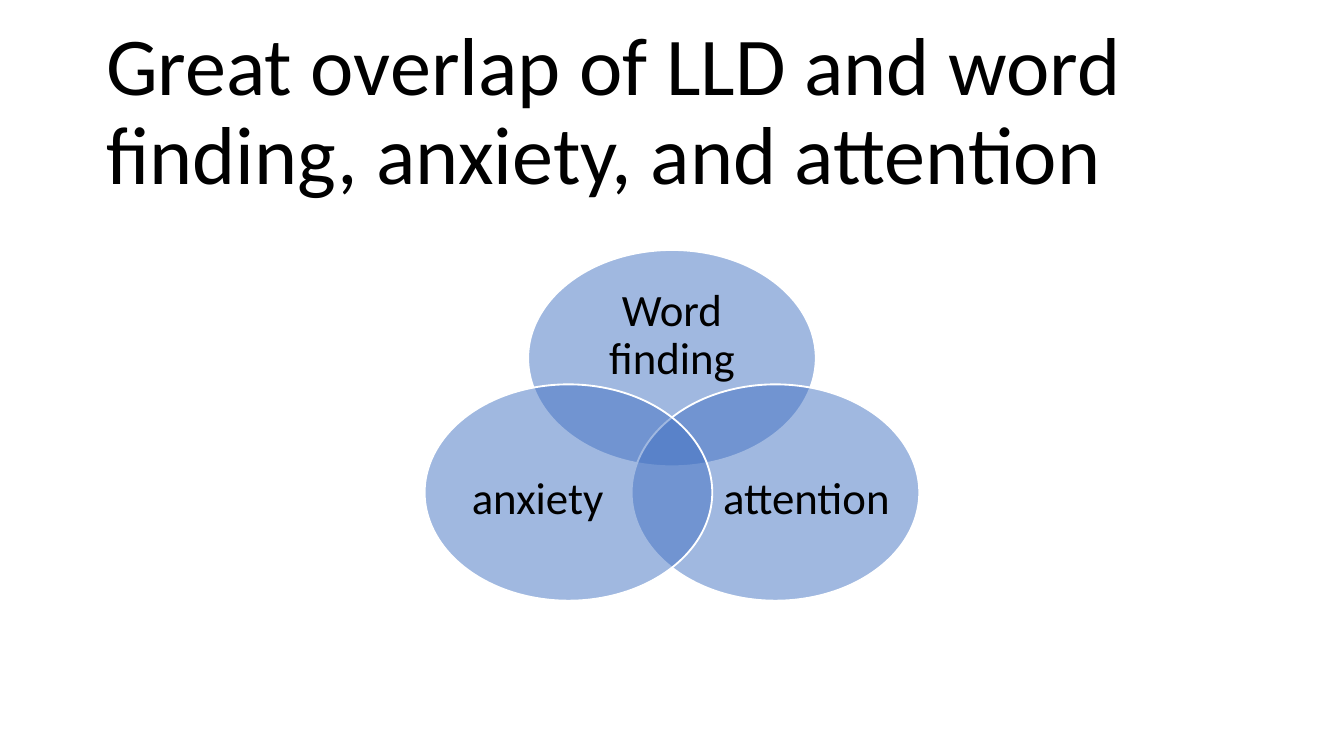
from dataclasses import dataclass

from lxml import etree
from pptx import Presentation
from pptx.dml.color import RGBColor
from pptx.enum.shapes import MSO_SHAPE
from pptx.enum.text import MSO_ANCHOR, MSO_AUTO_SIZE, PP_ALIGN
from pptx.oxml.ns import qn
from pptx.util import Inches, Pt

OVAL = MSO_SHAPE.OVAL
MIDDLE = MSO_ANCHOR.MIDDLE
NO_FIT = MSO_AUTO_SIZE.NONE
LEFT, CENTER = PP_ALIGN.LEFT, PP_ALIGN.CENTER


@dataclass(frozen=True)
class Theme:
    font: str = "Calibri"
    title_size: int = 44
    label_size: int = 24
    text: RGBColor = RGBColor(0, 0, 0)
    circle: RGBColor = RGBColor(0x43, 0x72, 0xC3)
    outline: RGBColor = RGBColor(0xFF, 0xFF, 0xFF)
    circle_alpha: int = 50


THEME = Theme()


def set_text(sp, text, size, align, inset_x=0, inset_y=0):
    tf = sp.text_frame
    tf.text = text
    tf.word_wrap = True
    tf.auto_size = NO_FIT
    tf.vertical_anchor = MIDDLE
    tf.margin_left = tf.margin_right = Inches(inset_x)
    tf.margin_top = tf.margin_bottom = Inches(inset_y)
    p = tf.paragraphs[0]
    p.alignment = align
    p.line_spacing = 0.9
    p.font.name = THEME.font
    p.font.size = Pt(size)
    p.font.color.rgb = THEME.text


def add_title(s, box, text):
    sp = s.shapes.title
    sp.left, sp.top, sp.width, sp.height = (Inches(v) for v in box)
    set_text(sp, text, THEME.title_size, LEFT, 0.1, 0.05)


def add_circle(shapes, x, y, w, h):
    sp = shapes.add_shape(OVAL, Inches(x), Inches(y), Inches(w), Inches(h))
    sp.shadow.inherit = False
    sp.fill.solid()
    sp.fill.fore_color.rgb = THEME.circle
    color = sp.element.spPr.find(qn("a:solidFill"))[0]
    etree.SubElement(color, qn("a:alpha"), val=str(THEME.circle_alpha * 1000))
    sp.line.color.rgb = THEME.outline
    sp.line.width = Pt(1)


def add_venn(s, box, labels):
    """Three overlapping ellipses: one on top, then lower right and lower left."""
    x, y, w, h = box
    cw, ch = 2.14, 1.61
    low = y + h - ch
    side_w, side_h, side_inset = 1.28, 0.88, 0.2
    side_y = low + 0.42
    circles = [(x + (w - cw) / 2, y), (x + w - cw, low), (x, low)]
    label_boxes = [
        (x + (w - 1.57) / 2, y + 0.28, 1.57, 0.72),
        (x + w - side_inset - side_w, side_y, side_w, side_h),
        (x + side_inset, side_y, side_w, side_h),
    ]

    group = s.shapes.add_group_shape()
    for (cx, cy), label_box, label in zip(circles, label_boxes, labels):
        add_circle(group.shapes, cx, cy, cw, ch)
        tb = group.shapes.add_textbox(*(Inches(v) for v in label_box))
        set_text(tb, label, THEME.label_size, CENTER)


def main():
    prs = Presentation()
    prs.slide_width = Inches(10)
    prs.slide_height = Inches(10 * 9 / 16)  # widescreen 16:9
    s = prs.slides.add_slide(prs.slide_layouts[5])

    # Title
    add_title(s, (0.69, 0.3, 8.62, 1.09),
              "Great overlap of LLD and word finding, anxiety, and attention")

    # Venn diagram
    add_venn(s, (3.16, 1.86, 3.68, 2.61),
             ["Word finding", "attention", "anxiety"])

    prs.save("out.pptx")


if __name__ == "__main__":
    main()
